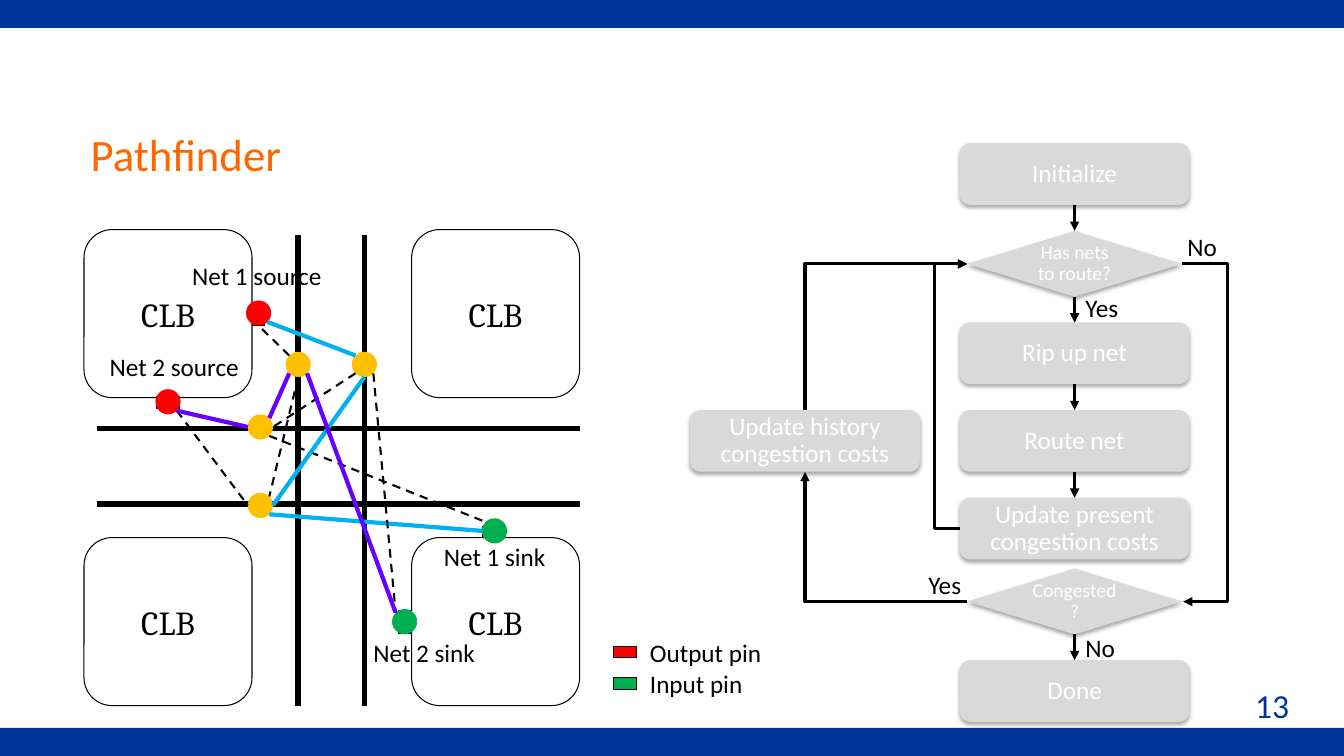
from math import sqrt

from lxml import etree
from pptx import Presentation
from pptx.dml.color import RGBColor
from pptx.enum.dml import MSO_LINE
from pptx.enum.shapes import MSO_CONNECTOR, MSO_SHAPE
from pptx.enum.text import MSO_ANCHOR, PP_ALIGN
from pptx.oxml.ns import qn
from pptx.util import Pt

RECT, ROUND, OVAL = MSO_SHAPE.RECTANGLE, MSO_SHAPE.ROUNDED_RECTANGLE, MSO_SHAPE.OVAL
STEP, DECISION = MSO_SHAPE.FLOWCHART_ALTERNATE_PROCESS, MSO_SHAPE.FLOWCHART_DECISION
STRAIGHT, DASH = MSO_CONNECTOR.STRAIGHT, MSO_LINE.DASH
LEFT, CENTER, RIGHT = PP_ALIGN.LEFT, PP_ALIGN.CENTER, PP_ALIGN.RIGHT
MIDDLE, TOP = MSO_ANCHOR.MIDDLE, MSO_ANCHOR.TOP

# Theme
THEME = {
    "navy": "003399", "orange": "FF6600", "black": "000000", "white": "FFFFFF",
    "grey": "D9D9D9", "output": "FF0000", "input": "00B050", "node": "FFC000",
    "net1": "00B0F0", "net2": "6600FF",
    "body": "Calibri", "serif": "Cambria",
    "title_size": 32, "large": 24, "text": 18, "small": 14,
}

# Content: routing fabric, positions in points
CLB_LEFTS, CLB_TOPS, CLB_SIZE = (60, 294), (164, 384), 120
TRACKS = [((69, y), (414, y)) for y in (306, 360)] + [((x, 168), (x, 504)) for x in (213, 260.5)]
DOT, PIN_LONG, PIN_SHORT = 18, 16.5, 8
DOTS = {  # name: (centre, colour)
    "A": ((186, 305), "node"), "B": ((213, 260.3), "node"),
    "C": ((260.3, 260.3), "node"), "D": ((186, 361), "node"),
    "source 1": ((184.7, 223.6), "output"), "source 2": ((120, 287), "output"),
    "sink 1": ((353.2, 379.2), "input"), "sink 2": ((289, 444), "input"),
}
UPRIGHT_PINS = ("source 1", "sink 2")
WIRES = [  # from dot, side, to dot, side, colour
    ("C", "SW", "A", "E", "black"), ("D", "SE", "sink 1", "W", "net1"),
    ("source 2", "SE", "D", "W", "black"), ("B", "NW", "source 1", "S", "black"),
    ("C", "NW", "source 1", "SE", "net1"), ("A", "SE", "sink 1", "NW", "black"),
    ("C", "SE", "sink 2", "NW", "black"), ("B", "S", "D", "NE", "black"),
    ("C", "S", "D", "E", "net1"), ("source 2", "SE", "A", "W", "net2"),
    ("A", "NE", "B", "SW", "net2"), ("B", "SE", "sink 2", "NW", "net2"),
]
PIN_LABELS = [("Net 2 source", 55.5, 247.7), ("Net 1 source", 114.5, 182.2),
              ("Net 1 sink", 284.4, 383), ("Net 2 sink", 234, 451.4)]
LEGEND = [("Output pin", "output", 451.4), ("Input pin", "input", 473.8)]

# Content: flow chart
SPINE, HISTORY = 767.6, 575
STEP_SIZE, DECISION_SIZE = (164, 44), (153.4, 47)
STEPS = [  # text, kind, centre x, top
    ("Initialize", STEP, SPINE, 102.3), ("Has nets to route?", DECISION, SPINE, 165),
    ("Rip up net", STEP, SPINE, 230.4), ("Route net", STEP, SPINE, 293),
    ("Update present congestion costs", STEP, SPINE, 355.6),
    ("Congested?", DECISION, SPINE, 406.2), ("Done", STEP, SPINE, 471.6),
    ("Update history congestion costs", STEP, HISTORY, 293),
]
ARROWS = [(0, 1), (1, 2), (2, 3), (3, 4), (5, 6)]
BRANCH_LABELS = [("No", 768.2, 447.8), ("Yes", 768.2, 205.2),
                 ("No", 841, 162), ("Yes", 656, 403.2)]


def color(name):
    return RGBColor.from_string(THEME[name])


def write(box, text, size="text", ink="black", face="body", align=CENTER,
          anchor=MIDDLE, spacing=None):
    frame = box.text_frame
    frame.word_wrap, frame.vertical_anchor = True, anchor
    para = frame.paragraphs[0]
    para.alignment = align
    if spacing:
        para.line_spacing = spacing
    span = para.add_run()
    span.text = text
    for name, value in {"size": Pt(THEME[size]), "name": THEME[face], "bold": False}.items():
        setattr(span.font, name, value)
    span.font.color.rgb = color(ink)


def add_label(page, text, left, top, width, height=29, **style):
    box = page.shapes.add_textbox(Pt(left), Pt(top), Pt(width), Pt(height))
    write(box, text, anchor=TOP, **style)


def add_block(page, kind, left, top, width, height, fill=None, edge=None):
    shape = page.shapes.add_shape(kind, Pt(left), Pt(top), Pt(width), Pt(height))
    shape.shadow.inherit = False
    if fill:
        shape.fill.solid()
        shape.fill.fore_color.rgb = color(fill)
    else:
        shape.fill.background()
    if edge:
        shape.line.color.rgb = color(edge)
        shape.line.width = Pt(0.75)
    else:
        shape.line.fill.background()
    return shape


def style_line(item, ink, width, dashed=False, arrow=False):
    item.line.color.rgb = color(ink)
    item.line.width = Pt(width)
    if dashed:
        item.line.dash_style = DASH
    if arrow:
        etree.SubElement(item.line._get_or_add_ln(), qn("a:tailEnd"), type="triangle")


def add_line(page, start, end, ink, width, **style):
    line = page.shapes.add_connector(STRAIGHT, *map(Pt, start + end))
    style_line(line, ink, width, **style)
    etree.SubElement(line._element.spPr, qn("a:effectLst"))
    return line


def add_route(page, points):
    corners = [(Pt(x), Pt(y)) for x, y in points]
    builder = page.shapes.build_freeform(*corners[0])
    builder.add_line_segments(corners[1:], close=False)
    route = builder.convert_to_shape()
    route.shadow.inherit = False
    route.fill.background()
    style_line(route, "black", 2.25, arrow=True)


def drop_shadow(shape):
    effects = shape._element.spPr.find(qn("a:effectLst"))
    shadow = etree.SubElement(effects, qn("a:outerShdw"), blurRad=str(Pt(3.1)),
                              dist=str(Pt(1.8)), dir="5400000", rotWithShape="0")
    ink = etree.SubElement(shadow, qn("a:srgbClr"), val=THEME["black"])
    etree.SubElement(ink, qn("a:alpha"), val="35000")


def dot_side(name, side):
    (x, y), _ = DOTS[name]
    reach = DOT / 2 / sqrt(len(side))
    return (x + reach * (("E" in side) - ("W" in side)),
            y + reach * (("S" in side) - ("N" in side)))


def draw_fabric(page):
    for top in CLB_TOPS:
        for left in CLB_LEFTS:
            block = add_block(page, ROUND, left, top, CLB_SIZE, CLB_SIZE, edge="black")
            write(block, "CLB", size="large", face="serif")
    for start, end in TRACKS:
        add_line(page, start, end, "black", 4)

    # Pins and routing nodes
    for name, ((x, y), fill) in DOTS.items():
        if fill != "node":
            width, height = PIN_LONG, PIN_SHORT
            if name in UPRIGHT_PINS:
                width, height = height, width
            add_block(page, RECT, x - width / 2, y + 0.6 - height / 2, width, height, fill, "black")
        add_block(page, OVAL, x - DOT / 2, y - DOT / 2, DOT, DOT, fill)

    # Candidate wires are dashed, chosen nets are coloured
    for first, side, second, other_side, ink in WIRES:
        spare = ink == "black"
        add_line(page, dot_side(first, side), dot_side(second, other_side), ink,
                 1.5 if spare else 3, dashed=spare)
    for text, left, top in PIN_LABELS:
        add_label(page, text, left, top, 138)
    for text, fill, top in LEGEND:
        add_block(page, RECT, 438.5, top + 10.5, PIN_LONG, PIN_SHORT, fill, "black")
        add_label(page, text, 457.2, top, 102, align=LEFT)


def draw_flow(page):
    shapes = []
    for text, kind, center, top in STEPS:
        width, height = DECISION_SIZE if kind == DECISION else STEP_SIZE
        shape = add_block(page, kind, center - width / 2, top, width, height, "grey")
        drop_shadow(shape)
        write(shape, text, size="small" if kind == DECISION else "text",
              ink="white", spacing=0.9)
        for side in ("left", "right", "top", "bottom"):
            setattr(shape.text_frame, f"margin_{side}", Pt(7.2))
        shapes.append(shape)
    for first, second in ARROWS:
        arrow = add_line(page, (0, 0), (0, 0), "black", 2.25, arrow=True)
        arrow.begin_connect(shapes[first], 2)
        arrow.end_connect(shapes[second], 0)

    # Loops back to the first decision and the exit to the second
    nets_y, congested_y = (STEPS[i][3] + DECISION_SIZE[1] / 2 for i in (1, 5))
    present_y = STEPS[4][3] + STEP_SIZE[1] / 2
    history_top = STEPS[7][3]
    near, far = SPINE - DECISION_SIZE[0] / 2, SPINE + DECISION_SIZE[0] / 2
    step_left = SPINE - STEP_SIZE[0] / 2
    add_route(page, [(step_left, present_y), (667.5, present_y), (667.5, nets_y), (near, nets_y)])
    add_route(page, [(far, nets_y), (877, nets_y), (877, congested_y), (far + 0.8, congested_y)])
    add_route(page, [(near, congested_y), (HISTORY, congested_y),
                     (HISTORY, history_top + STEP_SIZE[1])])
    add_route(page, [(HISTORY, history_top), (HISTORY, nets_y), (near, nets_y)])
    for text, left, top in BRANCH_LABELS:
        add_label(page, text, left, top, 59, align=LEFT)


def main():
    deck = Presentation()
    deck.slide_width, deck.slide_height = Pt(960), Pt(540)
    page = deck.slides.add_slide(deck.slide_layouts[5])

    # Bars, title and page number
    for top in (0, 520):
        add_block(page, RECT, 0, top, 960, 20, "navy")
    title = page.shapes.title
    for name, value in {"left": 57.6, "top": 64.8, "width": 684.7, "height": 90}.items():
        setattr(title, name, Pt(value))
    write(title, "Pathfinder", size="title_size", ink="orange", align=LEFT)
    add_label(page, "13", 728, 486, 200, 36, size="large", ink="navy", align=RIGHT)

    draw_fabric(page)
    draw_flow(page)
    deck.save("out.pptx")


if __name__ == "__main__":
    main()
